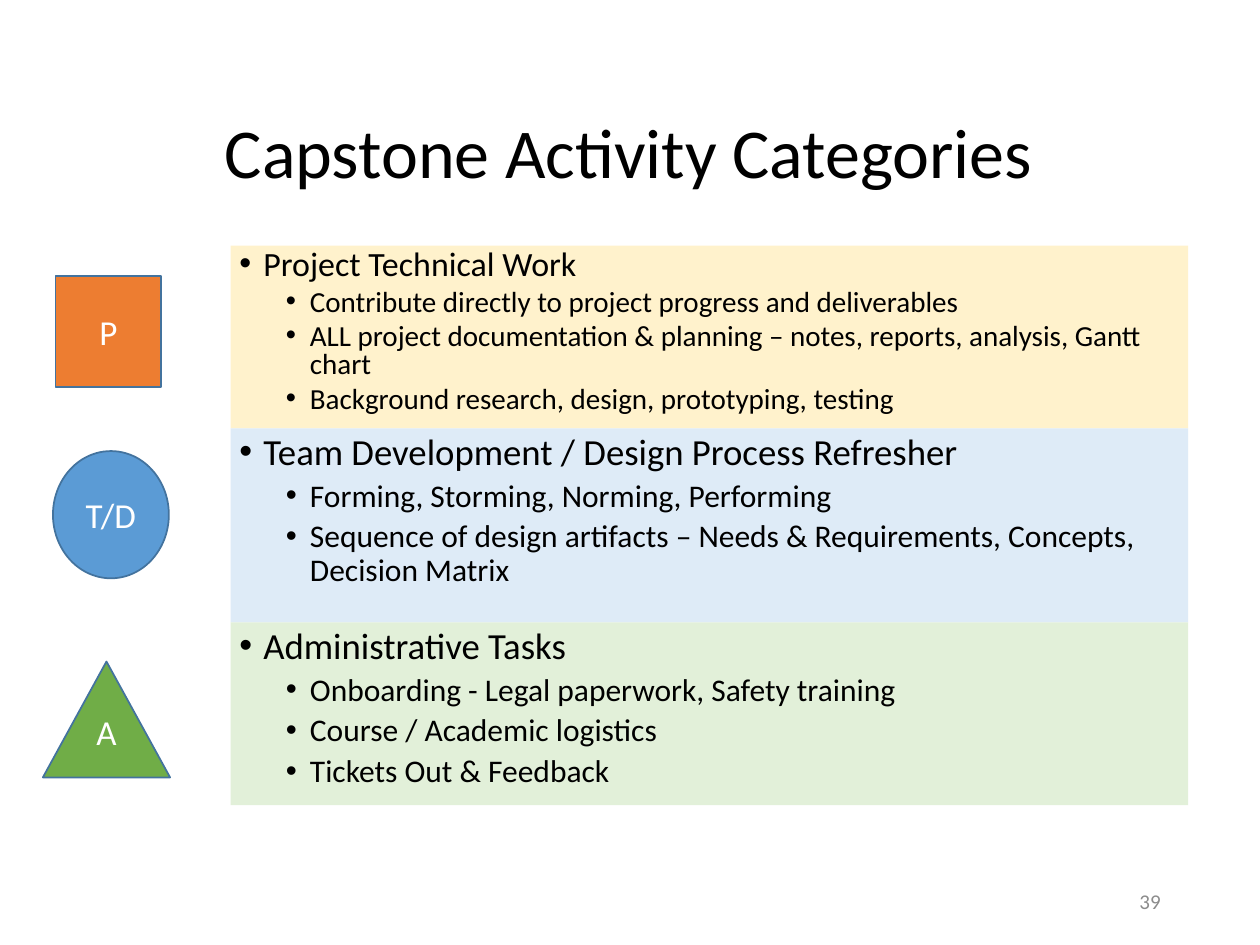
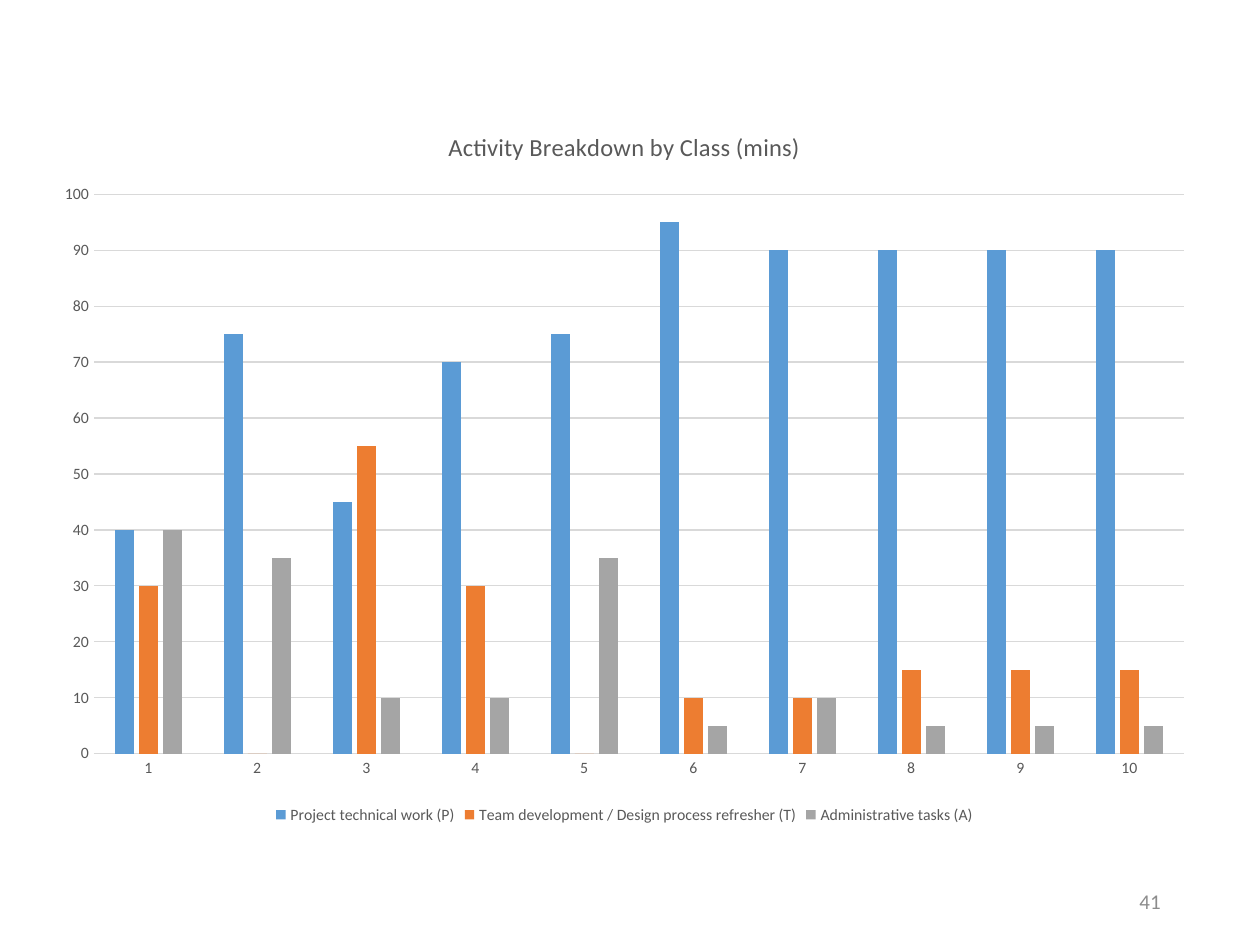
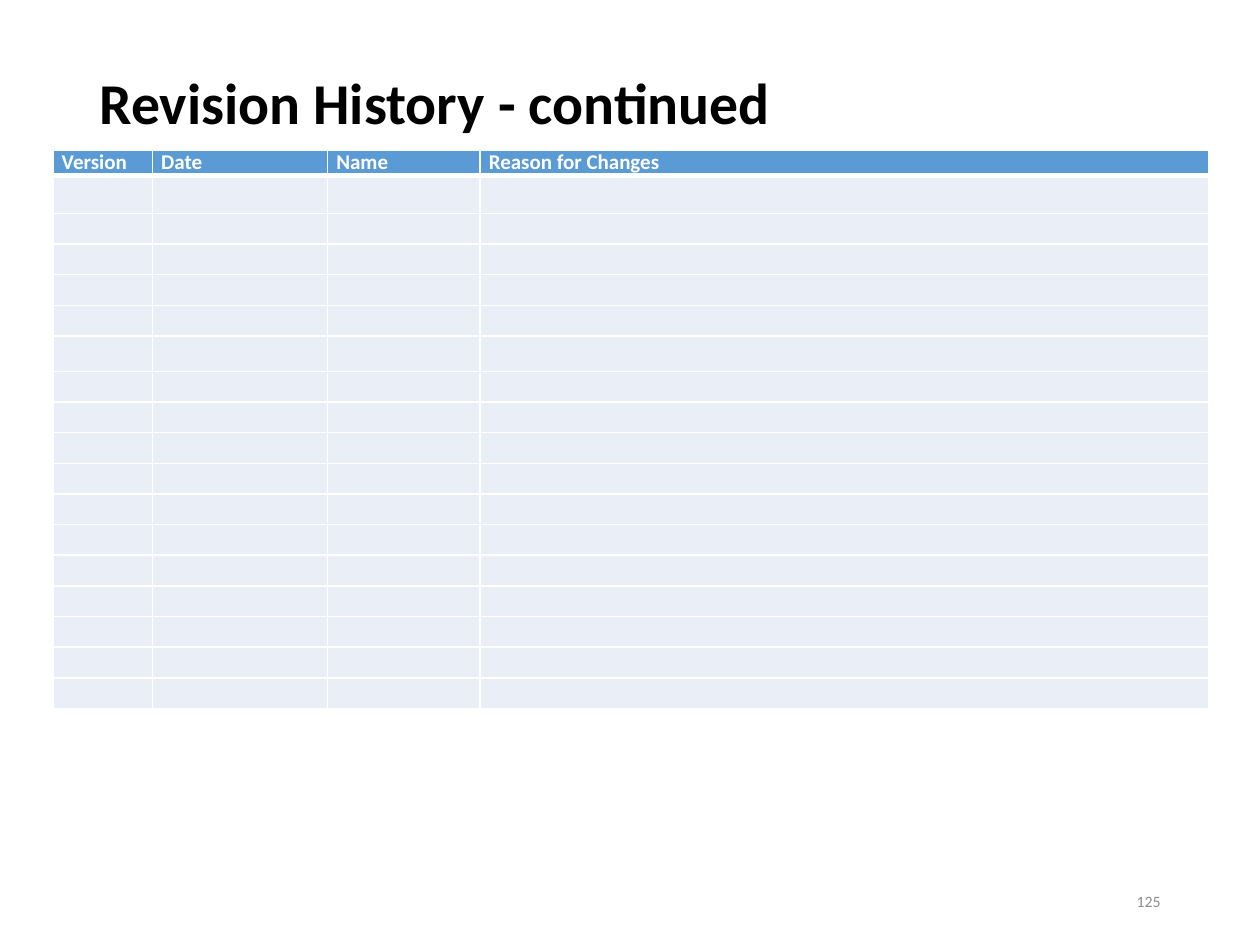
from lxml.etree import SubElement
from pptx import Presentation
from pptx.chart.data import CategoryChartData
from pptx.dml.color import RGBColor
from pptx.enum.chart import XL_CHART_TYPE, XL_LEGEND_POSITION, XL_TICK_MARK
from pptx.enum.shapes import MSO_SHAPE
from pptx.enum.text import MSO_ANCHOR, MSO_AUTO_SIZE, PP_ALIGN
from pptx.oxml import parse_xml
from pptx.oxml.ns import nsdecls, qn
from pptx.util import Inches, Pt

FONT = "Calibri"
BLACK = RGBColor(0x00, 0x00, 0x00)
WHITE = RGBColor(0xFF, 0xFF, 0xFF)
BLUE = RGBColor(0x5B, 0x9B, 0xD5)
ORANGE = RGBColor(0xED, 0x7D, 0x31)
GREEN = RGBColor(0x70, 0xAD, 0x47)
GREY = RGBColor(0xA5, 0xA5, 0xA5)
OUTLINE = RGBColor(0x43, 0x73, 0x9E)
PALE_YELLOW = RGBColor(0xFF, 0xF2, 0xCC)
PALE_BLUE = RGBColor(0xDE, 0xEB, 0xF7)
PALE_GREEN = RGBColor(0xE2, 0xF0, 0xD9)
TABLE_BODY = RGBColor(0xEA, 0xEF, 0xF7)
CHART_TEXT = RGBColor(0x59, 0x59, 0x59)
GRID = RGBColor(0xD9, 0xD9, 0xD9)
PAGE_NUMBER = RGBColor(0x8C, 0x8C, 0x8C)


def style_font(font, size, color, bold=False):
    font.name = FONT
    font.size = Pt(size)
    font.bold = bold
    font.color.rgb = color


def place(shape, left, top, width, height):
    shape.left, shape.top = Inches(left), Inches(top)
    shape.width, shape.height = Inches(width), Inches(height)


presentation = Presentation()
presentation.slide_width = Inches(10)
presentation.slide_height = Inches(7.5)
layouts = presentation.slide_layouts
categories_slide = presentation.slides.add_slide(layouts.get_by_name("Comparison"))
chart_slide = presentation.slides.add_slide(layouts.get_by_name("Blank"))
history_slide = presentation.slides.add_slide(layouts.get_by_name("Title Only"))

# Titles
titles = [
    (categories_slide, "Capstone Activity Categories", (0.68, 0.69, 8.62, 1.09), 40, False, PP_ALIGN.CENTER, 0.05),
    (history_slide, "Revision History - continued", (0.69, 0.4, 8.62, 1.45), 33, True, PP_ALIGN.LEFT, 0.62),
]
for slide, text, box, size, bold, alignment, bottom_inset in titles:
    title = slide.shapes.title
    place(title, *box)
    frame = title.text_frame
    frame.auto_size = MSO_AUTO_SIZE.NONE
    frame.vertical_anchor = MSO_ANCHOR.MIDDLE
    frame.margin_bottom = Inches(bottom_inset)
    paragraph = frame.paragraphs[0]
    paragraph.alignment = alignment
    paragraph.line_spacing = 0.9
    run = paragraph.add_run()
    run.text = text
    style_font(run.font, size, BLACK, bold)

# Slide 1: symbols and category bands
symbols = [
    (MSO_SHAPE.OVAL, "T/D", BLUE, (0.42, 3.58, 0.92, 1.01), 0.05),
    (MSO_SHAPE.ISOSCELES_TRIANGLE, "A", GREEN, (0.34, 5.25, 1.01, 0.92), 0.32),
    (MSO_SHAPE.RECTANGLE, "P", ORANGE, (0.44, 2.19, 0.84, 0.88), 0.05),
]
for kind, letter, color, box, bottom_inset in symbols:
    symbol = categories_slide.shapes.add_shape(kind, *map(Inches, box))
    symbol.shadow.inherit = False
    symbol.fill.solid()
    symbol.fill.fore_color.rgb = color
    symbol.line.color.rgb = OUTLINE
    symbol.line.width = Pt(1)
    symbol.text_frame.vertical_anchor = MSO_ANCHOR.MIDDLE
    symbol.text_frame.margin_bottom = Inches(bottom_inset)
    paragraph = symbol.text_frame.paragraphs[0]
    paragraph.alignment = PP_ALIGN.CENTER
    run = paragraph.add_run()
    run.text = letter
    style_font(run.font, 20, WHITE)

bands = [
    (PALE_YELLOW, 1.45, 0.8, 19.4, 16.6, [
        "Project Technical Work",
        "Contribute directly to project progress and deliverables",
        "ALL project documentation & planning – notes, reports, analysis, Gantt chart",
        "Background research, design, prototyping, testing",
    ]),
    (PALE_BLUE, 1.54, 0.9, 21, 18, [
        "Team Development / Design Process Refresher",
        "Forming, Storming, Norming, Performing",
        "Sequence of design artifacts – Needs & Requirements, Concepts, Decision Matrix",
    ]),
    (PALE_GREEN, 1.45, 0.9, 21, 18, [
        "Administrative Tasks",
        "Onboarding - Legal paperwork, Safety training",
        "Course / Academic logistics",
        "Tickets Out & Feedback",
    ]),
]
bodies = list(categories_slide.placeholders)[1:]
unused_body = bodies.pop()
unused_body.element.getparent().remove(unused_body.element)
band_top = 1.95
for body, (color, height, spacing, heading_size, item_size, lines) in zip(bodies, bands):
    place(body, 1.83, band_top, 7.6, height)
    band_top += height
    body.fill.solid()
    body.fill.fore_color.rgb = color
    frame = body.text_frame
    frame.auto_size = MSO_AUTO_SIZE.NONE
    frame.vertical_anchor = MSO_ANCHOR.TOP
    frame.margin_left = frame.margin_right = Inches(0.07)
    frame.margin_top = frame.margin_bottom = Inches(0.04)
    for index, line in enumerate(lines):
        is_item = index > 0
        paragraph = frame.add_paragraph() if is_item else frame.paragraphs[0]
        paragraph.level = int(is_item)
        paragraph.line_spacing = spacing
        paragraph.space_before = Pt(3.8 if is_item else 7.5)
        properties = paragraph._p.get_or_add_pPr()
        properties.set("marL", str(Inches(0.56 if is_item else 0.19)))
        properties.set("indent", str(Inches(-0.19)))
        SubElement(properties, qn("a:buFont"), typeface="Arial")
        SubElement(properties, qn("a:buChar"), char="•")
        run = paragraph.add_run()
        run.text = line
        style_font(run.font, item_size if is_item else heading_size, BLACK)

# Slide 2: chart of minutes per class
chart_data = CategoryChartData()
chart_data.categories = [str(number) for number in range(1, 11)]
series_list = [
    ("Project technical work (P)", BLUE, [40, 75, 45, 70, 75, 95, 90, 90, 90, 90]),
    ("Team development / Design process refresher (T)", ORANGE, [30, 0, 55, 30, 0, 10, 10, 15, 15, 15]),
    ("Administrative tasks (A)", GREY, [40, 35, 10, 10, 35, 5, 10, 5, 5, 5]),
]
for name, color, minutes in series_list:
    chart_data.add_series(name, minutes)
chart = chart_slide.shapes.add_chart(
    XL_CHART_TYPE.COLUMN_CLUSTERED, Inches(0.33), Inches(0.83), Inches(9.25), Inches(5.75), chart_data
).chart
style_font(chart.font, 10, BLACK)
paragraph = chart.chart_title.text_frame.paragraphs[0]
run = paragraph.add_run()
run.text = "Activity Breakdown by Class (mins)"
style_font(run.font, 14, CHART_TEXT)
chart.chart_title.include_in_layout = False
chart.has_legend = True
chart.legend.position = XL_LEGEND_POSITION.BOTTOM
chart.legend.include_in_layout = False
style_font(chart.legend.font, 9, CHART_TEXT)

plot = chart.plots[0]
plot.gap_width = 219
plot.overlap = -27
plot.vary_by_categories = False
for series, (name, color, minutes) in zip(plot.series, series_list):
    series.format.fill.solid()
    series.format.fill.fore_color.rgb = color

for axis in (chart.category_axis, chart.value_axis):
    axis.major_tick_mark = axis.minor_tick_mark = XL_TICK_MARK.NONE
    style_font(axis.tick_labels.font, 9, CHART_TEXT)
value_axis = chart.value_axis
value_axis.minimum_scale, value_axis.maximum_scale, value_axis.major_unit = 0, 100, 10
value_axis.format.line.fill.background()
for line in (chart.category_axis.format.line, value_axis.major_gridlines.format.line):
    line.color.rgb = GRID
    line.width = Pt(0.75)

# Slide 3: revision table
headers = ["Version", "Date", "Name", "Reason for Changes"]
column_widths = [0.79, 1.39, 1.21, 5.78]
usual_height = 3.65 / 15
row_heights = [0.2, 0.3] + [usual_height] * 4 + [0.28] + [usual_height] * 11
table = history_slide.shapes.add_table(
    len(row_heights), len(headers), Inches(0.42), Inches(1.19),
    Inches(sum(column_widths)), Inches(sum(row_heights))
).table
for column, width in zip(table.columns, column_widths):
    column.width = Inches(width)
for row_index, (row, height) in enumerate(zip(table.rows, row_heights)):
    row.height = Inches(height)
    for cell, header in zip(row.cells, headers):
        cell.margin_left = cell.margin_right = Inches(0.07)
        cell.margin_top = cell.margin_bottom = 0
        cell.fill.solid()
        cell.fill.fore_color.rgb = TABLE_BODY if row_index else BLUE
        paragraph = cell.text_frame.paragraphs[0]
        if row_index == 0:
            run = paragraph.add_run()
            run.text = header
            style_font(run.font, 12, WHITE, True)
        else:
            paragraph._p.get_or_add_endParaRPr().set("sz", "1000")
        border_widths = {
            "lnL": 1, "lnR": 1,
            "lnT": 3 if row_index == 1 else 1,
            "lnB": 3 if row_index == 0 else 1,
        }
        cell_properties = cell._tc.get_or_add_tcPr()
        for position, (tag, width) in enumerate(border_widths.items()):
            cell_properties.insert(position, parse_xml(
                f'<a:{tag} {nsdecls("a")} w="{Pt(width)}"><a:solidFill>'
                f'<a:srgbClr val="{WHITE}"/></a:solidFill></a:{tag}>'
            ))

# Page numbers
for slide, number, size in [(categories_slide, "39", 12), (chart_slide, "41", 12), (history_slide, "125", 9)]:
    number_box = slide.shapes.add_textbox(Inches(7.06), Inches(6.95), Inches(2.25), Inches(0.4))
    frame = number_box.text_frame
    frame.word_wrap = True
    frame.vertical_anchor = MSO_ANCHOR.MIDDLE
    paragraph = frame.paragraphs[0]
    paragraph.alignment = PP_ALIGN.RIGHT
    run = paragraph.add_run()
    run.text = number
    style_font(run.font, size, PAGE_NUMBER)

presentation.save("out.pptx")
